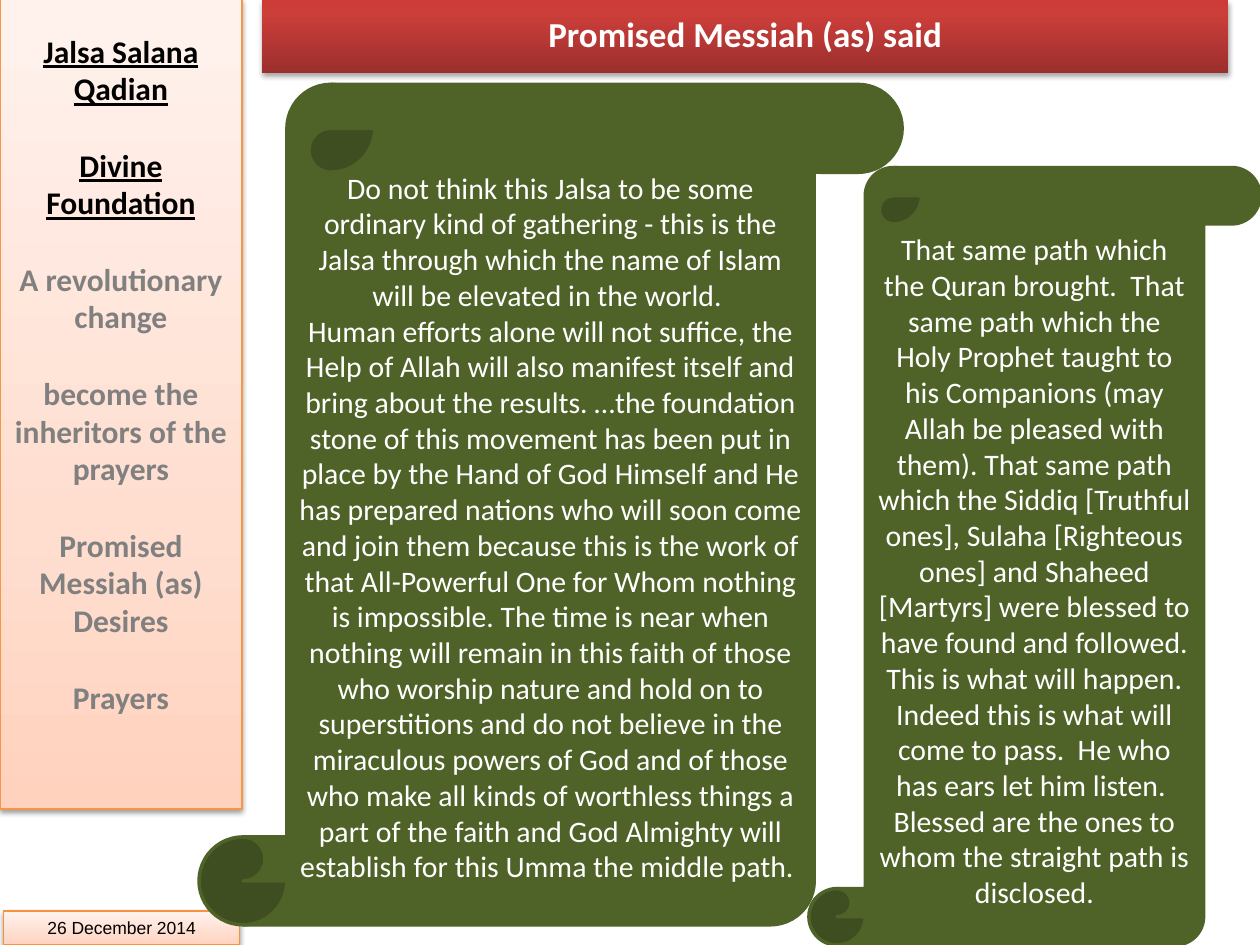
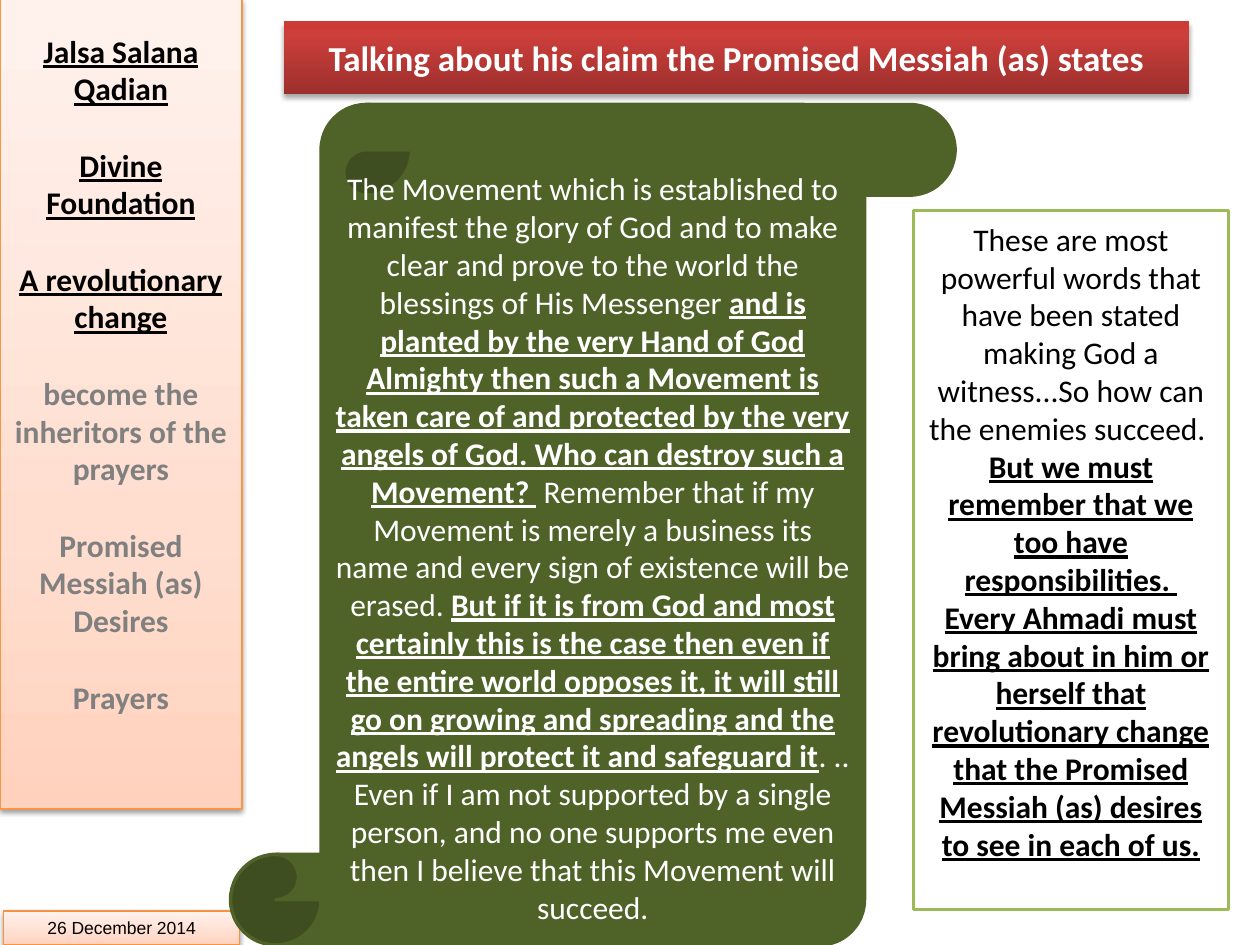
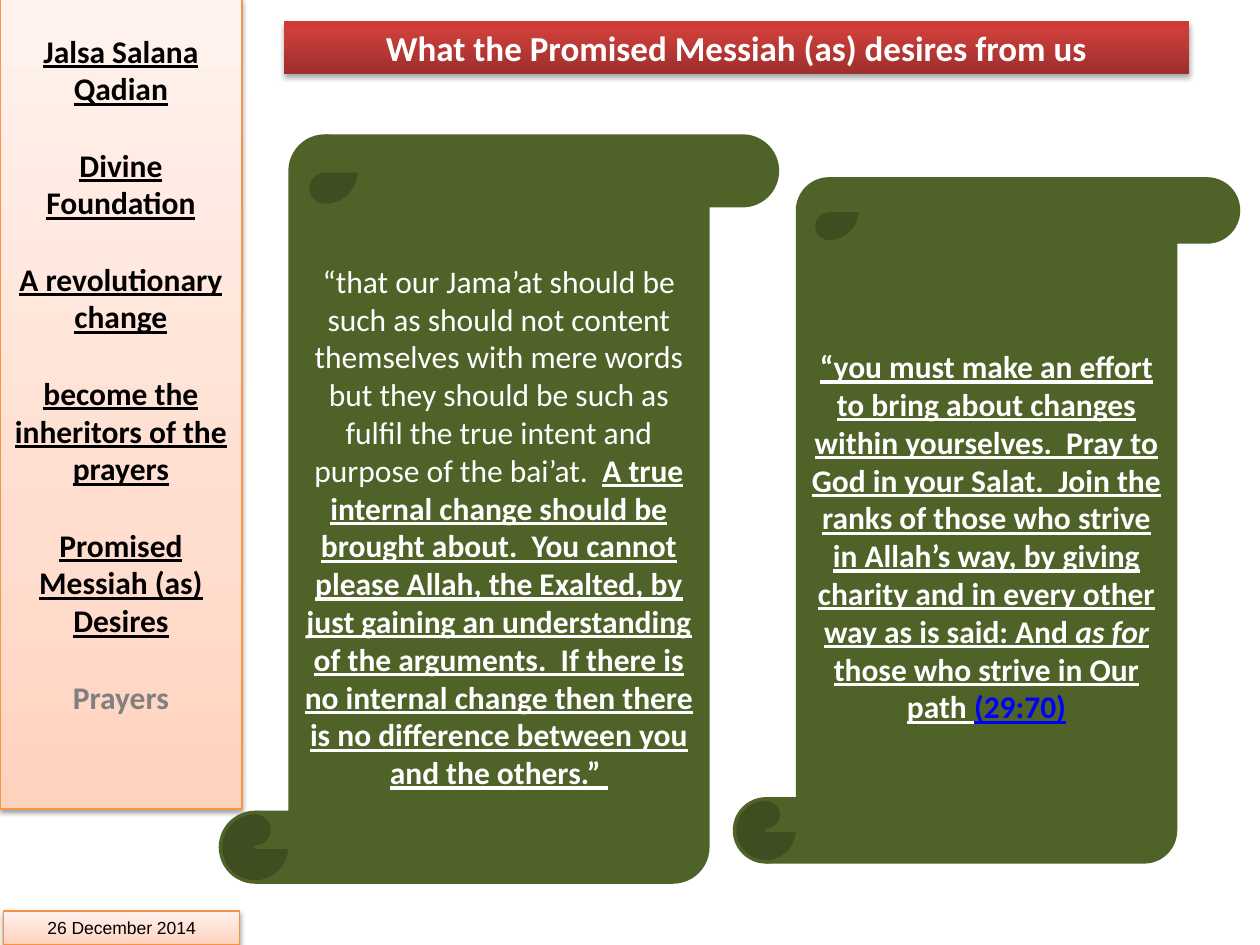
from lxml.etree import SubElement
from pptx import Presentation
from pptx.dml.color import RGBColor
from pptx.enum.shapes import MSO_SHAPE
from pptx.enum.text import MSO_ANCHOR, MSO_AUTO_SIZE, PP_ALIGN
from pptx.oxml.ns import qn
from pptx.util import Inches, Pt

# Colours
WHITE = RGBColor(0xFF, 0xFF, 0xFF)
BLACK = RGBColor(0x00, 0x00, 0x00)
GREY = RGBColor(0x80, 0x80, 0x80)
SCROLL_GREEN = RGBColor(0x4F, 0x62, 0x28)
NOTE_GREEN = RGBColor(0x9B, 0xBB, 0x59)
LINK_BLUE = RGBColor(0x00, 0x00, 0xFF)
SIDEBAR_ORANGE = RGBColor(0xF7, 0x96, 0x46)
DATE_ORANGE = RGBColor(0xF6, 0x92, 0x40)

# Gradients run upwards: (percent, colour)
RED_BAND = [(0, RGBColor(0x9C, 0x2F, 0x2D)), (80, RGBColor(0xCB, 0x3E, 0x3A)),
            (100, RGBColor(0xCE, 0x3B, 0x37))]
PEACH = [(0, RGBColor(0xFF, 0xD2, 0xBD)), (35, RGBColor(0xFF, 0xDE, 0xD0)),
         (100, RGBColor(0xFF, 0xF2, 0xED))]

# Shared content and places
TOPICS = ["Jalsa Salana Qadian", "Divine Foundation", "A revolutionary change",
          "become the inheritors of the prayers", "Promised Messiah (as) Desires", "Prayers"]
DATE = "26 December 2014"
SIDEBAR_BOX = (0, -0.01, 1.92, 6.43)
DATE_BOX = (0.03, 7.23, 1.87, 0.27)

# Run styles
PLAIN = {}
STRONG = {"bold": True, "underline": True}
STRONG_ITALIC = {**STRONG, "italic": True}


def place(shape, box):
    shape.left, shape.top, shape.width, shape.height = map(Inches, box)


def add_box(slide, preset, box):
    shape = slide.shapes.add_shape(preset, *map(Inches, box))
    shape.shadow.inherit = False
    return shape


def set_line(shape, colour, width):
    shape.line.color.rgb = colour
    shape.line.width = Pt(width)


def set_gradient(shape, stops):
    shape.fill.gradient()
    shape.fill.gradient_angle = 90
    stop_list = shape.element.spPr.find(".//" + qn("a:gsLst"))
    for old_stop in list(stop_list):
        stop_list.remove(old_stop)
    for percent, colour in stops:
        stop = SubElement(stop_list, qn("a:gs"), pos=str(percent * 1000))
        SubElement(stop, qn("a:srgbClr"), val=str(colour))


def drop_shadow(shape, opacity, distance):
    shape.shadow.inherit = False
    effects = shape.element.spPr.find(qn("a:effectLst"))
    shadow = SubElement(effects, qn("a:outerShdw"), blurRad=str(Pt(3.1)), dist=str(Pt(distance)),
                        dir="5400000", rotWithShape="0")
    colour = SubElement(shadow, qn("a:srgbClr"), val="000000")
    SubElement(colour, qn("a:alpha"), val=str(opacity * 1000))


def set_frame(shape, anchor=MSO_ANCHOR.MIDDLE, wrap=True):
    frame = shape.text_frame
    frame.auto_size = MSO_AUTO_SIZE.NONE
    frame.word_wrap = wrap
    frame.vertical_anchor = anchor
    return frame


def format_paragraph(paragraph, size, colour, name="Calibri", **style):
    paragraph.alignment = PP_ALIGN.CENTER
    paragraph.space_before = Pt(0)
    font = paragraph.font
    font.size, font.name, font.color.rgb = Pt(size), name, colour
    for attribute, value in style.items():
        setattr(font, attribute, value)


def fill_paragraphs(frame, paragraphs, size, colour):
    """Each paragraph is a list of (text, style) runs."""
    for index, runs in enumerate(paragraphs):
        paragraph = frame.add_paragraph() if index else frame.paragraphs[0]
        format_paragraph(paragraph, size, colour)
        for text, style in runs:
            run = paragraph.add_run()
            run.text = text
            for attribute, value in style.items():
                if attribute == "colour":
                    run.font.color.rgb = value
                else:
                    setattr(run.font, attribute, value)


# Regions
def title_band(slide, text, box, line_spacing=1.0):
    band = slide.shapes.title
    place(band, box)
    set_gradient(band, RED_BAND)
    band.line.fill.background()
    drop_shadow(band, 35, 1.8)
    frame = set_frame(band)
    frame.margin_left = frame.margin_right = frame.margin_top = frame.margin_bottom = Inches(0.04)
    frame.text = text
    format_paragraph(frame.paragraphs[0], 20, WHITE, bold=True)
    frame.paragraphs[0].line_spacing = line_spacing


def topic_sidebar(slide, covered):
    """List the topics; those covered so far are black and underlined."""
    sidebar = slide.placeholders[1]
    place(sidebar, SIDEBAR_BOX)
    set_gradient(sidebar, PEACH)
    set_line(sidebar, SIDEBAR_ORANGE, 0.75)
    drop_shadow(sidebar, 38, 1.6)
    frame = set_frame(sidebar, MSO_ANCHOR.TOP)
    frame.margin_top = Inches(0.26)
    frame.text = "\n".join(TOPICS)
    for index, paragraph in enumerate(frame.paragraphs):
        done = index < covered
        format_paragraph(paragraph, 18, BLACK if done else GREY, bold=True, underline=done)
        paragraph.space_before = Pt(22 if index else 0)
        properties = paragraph._p.get_or_add_pPr()
        properties.set("marL", "0")
        properties.set("indent", "0")
        bullet_off = properties.makeelement(qn("a:buNone"))
        properties.find(qn("a:defRPr")).addprevious(bullet_off)


def date_footer(slide):
    footer = add_box(slide, MSO_SHAPE.RECTANGLE, DATE_BOX)
    set_gradient(footer, PEACH)
    set_line(footer, DATE_ORANGE, 0.75)
    drop_shadow(footer, 38, 1.6)
    frame = set_frame(footer, wrap=False)
    frame.text = DATE
    format_paragraph(frame.paragraphs[0], 10, BLACK, "Arial")


def quote_scroll(slide, box, paragraphs, size=18):
    scroll = add_box(slide, MSO_SHAPE.VERTICAL_SCROLL, box)
    scroll.fill.solid()
    scroll.fill.fore_color.rgb = SCROLL_GREEN
    set_line(scroll, SCROLL_GREEN, 2)
    fill_paragraphs(set_frame(scroll), paragraphs, size, WHITE)


def comment_box(slide, box, paragraphs):
    comment = add_box(slide, MSO_SHAPE.RECTANGLE, box)
    comment.fill.solid()
    comment.fill.fore_color.rgb = WHITE
    set_line(comment, NOTE_GREEN, 2)
    frame = set_frame(comment)
    frame.margin_bottom = Inches(0.35)
    fill_paragraphs(frame, paragraphs, 18, BLACK)


def topic_slide(deck, title, title_box, covered, line_spacing=1.0):
    slide = deck.slides.add_slide(deck.slide_layouts[1])
    title_band(slide, title, title_box, line_spacing)
    topic_sidebar(slide, covered)
    date_footer(slide)
    return slide


# Slides
def foundation_slide(deck):
    slide = topic_slide(deck, "Promised Messiah (as) said", (2.08, 0, 7.67, 0.58), 2, 0.9)
    quote_scroll(slide, (1.58, 0.67, 5.58, 6.67), [
        [("Do not think this Jalsa to be some ordinary kind of gathering - this is the Jalsa "
          "through which the name of Islam will be elevated in the world. ", PLAIN)],
        [("Human efforts alone will not suffice, the Help of Allah will also manifest itself and "
          "bring about the results. …the foundation stone of this movement has been put in place "
          "by the Hand of God Himself and He has prepared nations who will soon come and join "
          "them because this is the work of that All-Powerful One for Whom nothing is impossible. "
          "The time is near when nothing will remain in this faith of those who worship nature "
          "and hold on to superstitions and do not believe in the miraculous powers of God and "
          "of those who make all kinds of worthless things a part of the faith and God Almighty "
          "will establish for this Umma the middle path. ", PLAIN)],
    ], 17)
    quote_scroll(slide, (6.42, 1.33, 3.58, 6.17), [
        [("That same path which the Quran brought.  That same path which the Holy Prophet taught "
          "to his Companions (may Allah be pleased with them). That same path which the Siddiq "
          "[Truthful ones], Sulaha [Righteous ones] and Shaheed [Martyrs] were blessed to have "
          "found and followed.  This is what will happen.  Indeed this is what will come to "
          "pass.  He who has ears let him listen.  Blessed are the ones to whom the straight "
          "path is disclosed.", PLAIN)],
    ], 17)


def claim_slide(deck):
    slide = topic_slide(deck, "Talking about his claim the Promised Messiah (as) states",
                        (2.25, 0.17, 7.19, 0.58), 3)
    quote_scroll(slide, (1.83, 0.83, 5.75, 6.67), [[
        ("The Movement which is established to manifest the glory of God and to make clear and "
         "prove to the world the blessings of His Messenger ", PLAIN),
        ("and is planted by the very Hand of God Almighty then such a Movement is taken care of "
         "and protected by the very angels of God. Who can destroy such a Movement? ", STRONG),
        (" Remember that if my Movement is merely a business its name and every sign of "
         "existence will be erased. ", PLAIN),
        ("But if it is from God and most certainly this is the case then even if the entire "
         "world opposes it, it will still go on growing and spreading and the angels will "
         "protect it and safeguard it", STRONG),
        (". .. Even if I am not supported by a single person, and no one supports me even then "
         "I believe that this Movement will succeed.", PLAIN),
    ]])
    comment_box(slide, (7.25, 1.67, 2.5, 5.55), [[
        ("These are most powerful words that have been stated making God a witness...So how can "
         "the enemies succeed.  ", PLAIN),
        ("But we must remember that we too have responsibilities.  Every Ahmadi must bring about "
         "in him or herself that revolutionary change that the Promised Messiah (as) desires to "
         "see in each of us.", STRONG),
    ]])


def desires_slide(deck):
    slide = topic_slide(deck, "What the Promised Messiah (as) desires from us",
                        (2.25, 0.17, 7.19, 0.42), 5)
    quote_scroll(slide, (1.75, 1.08, 4.42, 5.92), [[
        ("“that our Jama’at should be such as should not content themselves with mere words but "
         "they should be such as fulfil the true intent and purpose of the bai’at.  ", PLAIN),
        ("A true internal change should be brought about.  You cannot please Allah, the Exalted, "
         "by just gaining an understanding of the arguments.  If there is no internal change "
         "then there is no difference between you and the others.” ", STRONG),
    ]])
    quote_scroll(slide, (5.83, 1.42, 4, 5.42), [[
        ("“you must make an effort to bring about changes within yourselves.  Pray to God in "
         "your Salat.  Join the ranks of those who strive in Allah’s way, by giving charity and "
         "in every other way as is said: And ", STRONG),
        ("as for ", STRONG_ITALIC),
        ("those who strive in Our path ", STRONG),
        ("(29:70)", {**STRONG, "colour": LINK_BLUE}),
    ]])


def main():
    deck = Presentation()
    deck.slide_width, deck.slide_height = Inches(10), Inches(7.5)
    foundation_slide(deck)
    claim_slide(deck)
    desires_slide(deck)
    deck.save("out.pptx")


if __name__ == "__main__":
    main()
